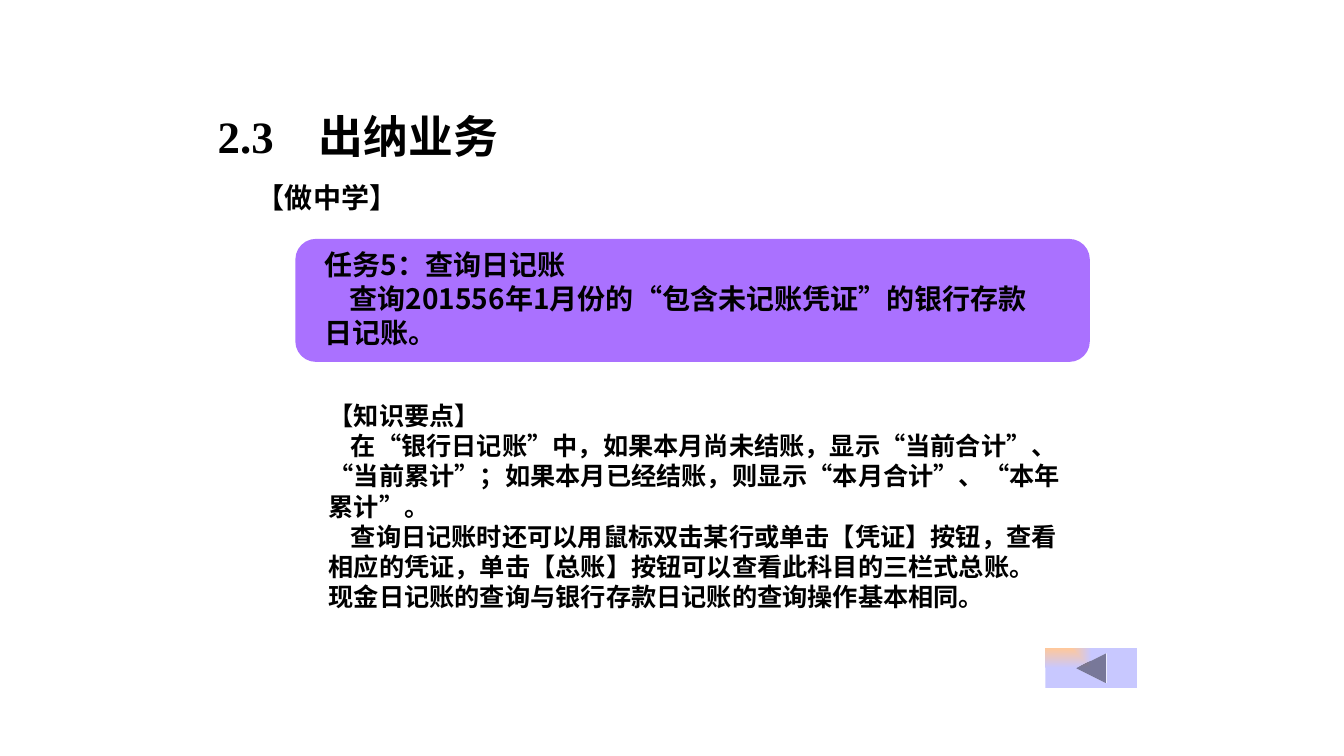
"""Build the cashier business slide with its journal query task and key points."""
from itertools import groupby

from pptx import Presentation
from pptx.dml.color import RGBColor
from pptx.enum.shapes import MSO_SHAPE as Shape
from pptx.enum.text import MSO_ANCHOR as Anchor, MSO_AUTO_SIZE as AutoSize, PP_ALIGN as Align
from pptx.oxml import parse_xml
from pptx.oxml.ns import nsdecls, qn
from pptx.util import Inches, Pt

TITLE = [(0, "2.3\t出纳业务")]
LABEL = [(0, "【做中学】")]
TASK = [
    (0, "任务5：查询日记账"),
    (0.25, "查询201556年1月份的“包含未记账凭证”的银行存款日记账。"),
]
KEY_POINTS = [
    (0, "【知识要点】"),
    (0.22, "在“银行日记账”中，如果本月尚未结账，显示“当前合计”、“当前累计”；"
           "如果本月已经结账，则显示“本月合计”、“本年累计”。"),
    (0.22, "查询日记账时还可以用鼠标双击某行或单击【凭证】按钮，查看相应的凭证，"
           "单击【总账】按钮可以查看此科目的三栏式总账。"),
    (0, "现金日记账的查询与银行存款日记账的查询操作基本相同。"),
]

SANS, SERIF = "Noto Sans CJK SC", "Times New Roman"
BLACK = RGBColor(0x00, 0x00, 0x00)
PURPLE = RGBColor(0xAA, 0x71, 0xFF)
PEACH = RGBColor(0xFF, 0xC8, 0x9B)
LILAC = RGBColor(0xC8, 0xC8, 0xFF)

PLACES = {
    "title": (15.45, 13.73, 66.77, 8.53),
    "label": (18.38, 23.2, 12, 5.87),
    "panel": (21.98, 31.6, 59.11, 16.27),
    "task": (23.41, 32.13, 55.81, 14.8),
    "key points": (23.71, 52.13, 56.71, 29.6),
    "button": (77.79, 85.73, 6.83, 5.33),
}
TITLE_TAB = 0.9
LINE_HEIGHT = 1.2


def apply(target, formats):
    for name, value in formats.items():
        setattr(target, name, value)


def box(part):
    """Turn percentages of the slide into lengths."""
    sides = (deck.slide_width, deck.slide_height) * 2
    return [int(side * share / 100) for side, share in zip(sides, PLACES[part])]


def place(holder, part):
    apply(holder, dict(zip(("left", "top", "width", "height"), box(part))))
    return holder


def write(holder, lines, size, face=SANS, anchor=Anchor.TOP, wrap=True):
    frame = holder.text_frame
    apply(frame, {"word_wrap": wrap, "vertical_anchor": anchor,
                  "auto_size": AutoSize.SHAPE_TO_FIT_TEXT})
    for number, (indent, line) in enumerate(lines):
        paragraph = frame.add_paragraph() if number else frame.paragraphs[0]
        apply(paragraph, {"alignment": Align.LEFT, "space_before": Pt(0),
                          "line_spacing": Pt(size * LINE_HEIGHT)})
        settings = paragraph._p.get_or_add_pPr()
        settings.set("marL", "0")
        settings.set("indent", str(Inches(indent)))
        settings.append(parse_xml(f"<a:buNone {nsdecls('a')}/>"))
        if "\t" in line:
            settings.append(parse_xml(
                f'<a:tabLst {nsdecls("a")}><a:tab pos="{Inches(TITLE_TAB)}" algn="l"/></a:tabLst>'))
        for quoted, letters in groupby(line, lambda letter: letter in "“”"):
            run = paragraph.add_run()
            run.text = "".join(letters)
            apply(run.font, {"name": SERIF if quoted else face, "size": Pt(size), "bold": True})
            run.font.color.rgb = BLACK
            run.font._element.find(qn("a:latin")).addnext(
                parse_xml(f'<a:ea {nsdecls("a")} typeface="{SANS}"/>'))


def add_plain(kind, part):
    shape = slide.shapes.add_shape(kind, *box(part))
    shape.shadow.inherit = False
    shape.line.fill.background()
    return shape


deck = Presentation()
apply(deck, {"slide_width": Inches(13.33), "slide_height": Inches(7.5)})
slide = deck.slides.add_slide(deck.slide_layouts[1])

button = add_plain(Shape.ACTION_BUTTON_BACK_OR_PREVIOUS, "button")
button.fill.gradient()
for stop, color, position in zip(button.fill.gradient_stops, (PEACH, LILAC), (0, 1)):
    stop.color.rgb = color
    stop.position = position
direction = button._element.spPr.find(qn("a:gradFill")).find(qn("a:lin"))
direction.getparent().replace(direction, parse_xml(
    f'<a:path {nsdecls("a")} path="rect"><a:fillToRect r="100000" b="100000"/></a:path>'))

panel = add_plain(Shape.ROUNDED_RECTANGLE, "panel")
panel.fill.solid()
panel.fill.fore_color.rgb = PURPLE

write(place(slide.shapes.title, "title"), TITLE, 32, SERIF)
write(place(slide.placeholders[1], "key points"), KEY_POINTS, 18, anchor=Anchor.MIDDLE)
write(slide.shapes.add_textbox(*box("label")), LABEL, 20, SERIF, Anchor.MIDDLE, False)
write(slide.shapes.add_textbox(*box("task")), TASK, 20)

deck.save("out.pptx")
